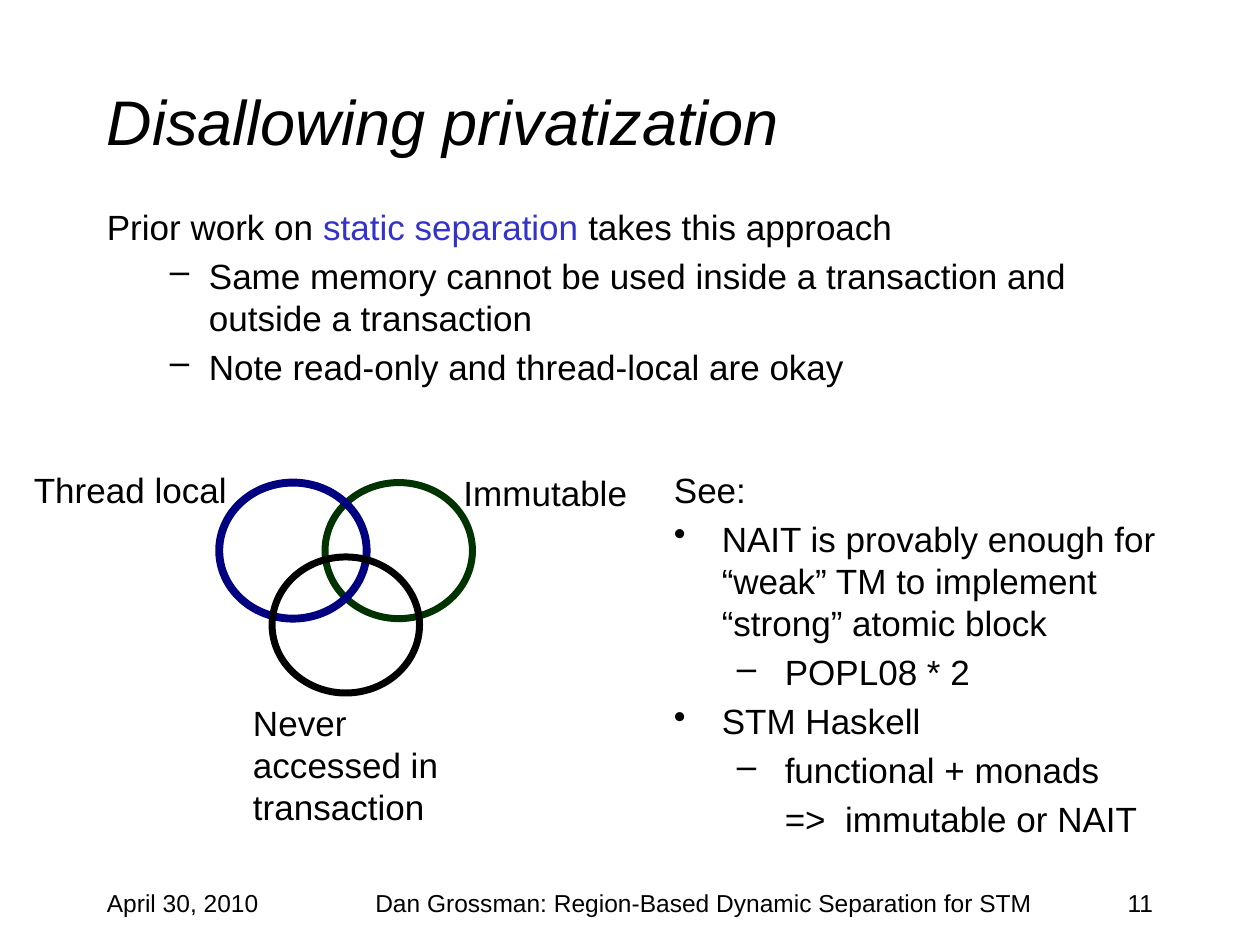
import dataclasses

import pptx
import pptx.dml.color
import pptx.enum.shapes
import pptx.enum.text
import pptx.oxml
import pptx.oxml.ns
import pptx.util

Inches = pptx.util.Inches
Align = pptx.enum.text.PP_ALIGN
Anchor = pptx.enum.text.MSO_ANCHOR


@dataclasses.dataclass(frozen=True)
class Theme:
    font: str = "Arial"
    title_size: int = 36
    body_size: int = 20
    footer_size: int = 14
    text: str = "000000"
    accent: str = "3333CC"
    immutable: str = "003300"
    thread_local: str = "000080"


THEME = Theme()


@dataclasses.dataclass(frozen=True)
class Item:
    """One paragraph; runs are strings or (string, colour) pairs."""
    runs: tuple
    level: int = 0
    margin: float = 0
    hanging: float = 0
    bullet: str = ""
    before: float = 0


def rgb(value):
    return pptx.dml.color.RGBColor.from_string(value)


def format_indent(paragraph, item):
    properties = paragraph._p.get_or_add_pPr()
    properties.set("marL", str(Inches(item.margin)))
    properties.set("indent", str(-Inches(item.hanging)))
    if item.bullet:
        bullet = pptx.oxml.parse_xml(
            f'<a:buChar {pptx.oxml.ns.nsdecls("a")} char="{item.bullet}"/>')
        properties.append(bullet)


def add_text(slide, box, items, size=THEME.body_size, italic=False,
             align=Align.LEFT, anchor=Anchor.TOP, wrap=True):
    """Place a text box; items is a string or a list of Item."""
    shape = slide.shapes.add_textbox(*map(Inches, box))
    frame = shape.text_frame
    frame.word_wrap = wrap
    frame.vertical_anchor = anchor
    if isinstance(items, str):
        items = [Item((line,)) for line in items.split("\n")]
    for index, item in enumerate(items):
        paragraph = frame.add_paragraph() if index else frame.paragraphs[0]
        paragraph.alignment = align
        paragraph.level = item.level
        paragraph.space_before = pptx.util.Pt(item.before)
        format_indent(paragraph, item)
        for part in item.runs:
            text, color = (part, THEME.text) if isinstance(part, str) else part
            run = paragraph.add_run()
            run.text = text
            run.font.name = THEME.font
            run.font.size = pptx.util.Pt(size)
            run.font.italic = italic
            run.font.color.rgb = rgb(color)
    return shape


def add_circle(slide, box, color, width):
    circle = slide.shapes.add_shape(
        pptx.enum.shapes.MSO_SHAPE.OVAL, *map(Inches, box))
    circle.shadow.inherit = False
    circle.fill.background()
    circle.line.color.rgb = rgb(color)
    circle.line.width = pptx.util.Pt(width)


def add_title(slide, box):
    add_text(slide, box, "Disallowing privatization", size=THEME.title_size,
             italic=True, anchor=Anchor.MIDDLE)


def add_prior_work(slide, box):
    point = dict(level=1, margin=0.81, hanging=0.31, bullet="–", before=4)
    add_text(slide, box, [
        Item(("Prior work on ", ("static separation", THEME.accent),
              " takes this approach"), margin=0.38, hanging=0.38, before=4),
        Item(("Same memory cannot be used inside a transaction "
              "and outside a transaction",), **point),
        Item(("Note read-only and thread-local are okay",), **point),
    ])


def add_venn(slide, box):
    left, top, width, height = box
    circle_width, circle_height = 1.17, 1.08
    step = 0.42
    circles_left = left + 1.57
    circles_top = top + 0.16
    # Three overlapping sets: two above, one centred below
    for column, drop, color, line_width in (
            (2, 0, THEME.immutable, 4),
            (0, 0, THEME.thread_local, 4.5),
            (1, 0.59, THEME.text, 4)):
        add_circle(slide, (circles_left + column * step, circles_top + drop,
                           circle_width, circle_height), color, line_width)
    # Set labels
    add_text(slide, (left, top, 1.75, 0.44), "Thread local", wrap=False)
    add_text(slide, (left + width - 1.51, top + 0.02, 1.51, 0.44),
             "Immutable", wrap=False)
    add_text(slide, (left + 1.74, top + height - 1.11, 1.67, 1.11),
             "Never\naccessed in transaction")


def add_references(slide, box):
    main = dict(margin=0.38, hanging=0.38, before=4)
    sub = dict(level=1, margin=0.88, before=4)
    dash = dict(sub, hanging=0.38, bullet="–")
    add_text(slide, box, [
        Item(("See:",), **main),
        Item(("NAIT is provably enough for “weak” TM to implement "
              "“strong” atomic block",), bullet="•", **main),
        Item(("POPL08 * 2",), **dash),
        Item(("STM Haskell",), bullet="•", **main),
        Item(("functional + monads",), **dash),
        Item(("=>  immutable or NAIT",), **sub),
    ])


def add_footer(slide, box):
    left, top, width, height = box
    side = 2.08
    for offset, part_width, text, align in (
            (0, side, "April 30, 2010", Align.LEFT),
            (1.92, 5.83,
             "Dan Grossman: Region-Based Dynamic Separation for STM",
             Align.CENTER),
            (width - side, side, "11", Align.RIGHT)):
        add_text(slide, (left + offset, top, part_width, height), text,
                 size=THEME.footer_size, align=align)


def main():
    presentation = pptx.Presentation()
    presentation.slide_width = Inches(10)
    presentation.slide_height = Inches(7.5)
    slide = presentation.slides.add_slide(presentation.slide_layouts[6])
    add_title(slide, (0.75, 0.33, 8.5, 1.25))
    add_prior_work(slide, (0.75, 1.58, 8.5, 1.67))
    add_footer(slide, (0.75, 7, 8.5, 0.5))
    add_venn(slide, (0.17, 3.67, 4.92, 2.96))
    add_references(slide, (5.25, 3.67, 4.58, 3.33))
    presentation.save("out.pptx")


if __name__ == "__main__":
    main()
